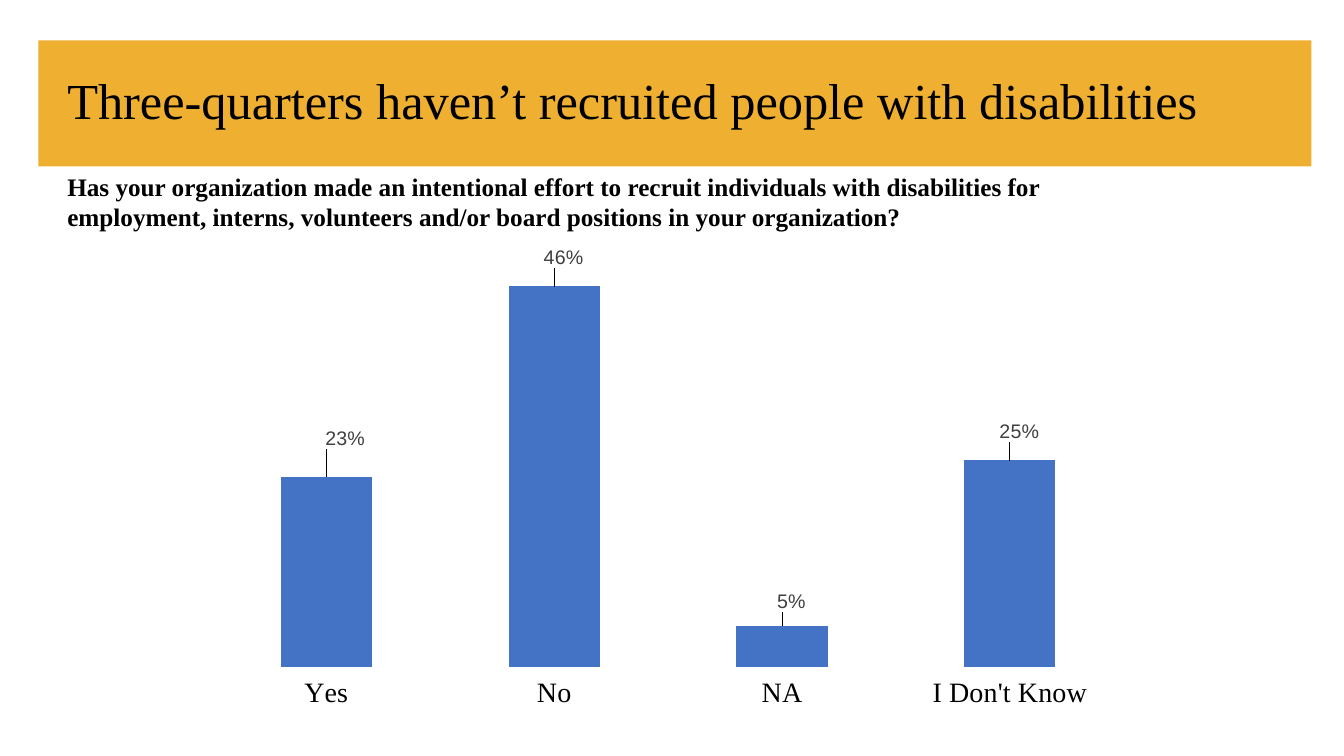
from dataclasses import dataclass

from lxml.etree import fromstring
from pptx import Presentation
from pptx.chart.data import CategoryChartData as ChartData
from pptx.dml.color import RGBColor as Rgb
from pptx.enum.chart import XL_CHART_TYPE as Kind
from pptx.enum.chart import XL_LABEL_POSITION as Spot
from pptx.enum.chart import XL_TICK_LABEL_POSITION as Ticks
from pptx.enum.chart import XL_TICK_MARK as Mark
from pptx.enum.shapes import MSO_SHAPE as Shape
from pptx.enum.text import MSO_ANCHOR as Anchor
from pptx.util import Pt

NS = "http://schemas.openxmlformats.org/drawingml/2006/chart"


@dataclass(frozen=True)
class Theme:
    gold: str = "EFAF30"
    blue: str = "4472C4"
    black: str = "000000"
    gray: str = "404040"
    serif: str = "Times New Roman"
    sans: str = "Arial"
    title: int = 36
    axis: int = 20
    body: int = 18
    label: int = 14
    base: int = 10


THEME = Theme()

# Answer, percent, and label shift as a share of the chart size
ANSWERS = [
    ("Yes", 23, 0.02, -0.05),
    ("No", 46, 0.01, -0.03),
    ("NA", 5, 0.01, -0.02),
    ("I Don't Know", 25, 0.01, -0.03),
]


def style(font, size, color=THEME.black, face=THEME.serif, bold=False):
    font.size, font.name, font.bold = Pt(size), face, bold
    font.color.rgb = Rgb.from_string(color)


def add_band(slide, box, color):
    band = slide.shapes.add_shape(Shape.RECTANGLE, *map(Pt, box))
    band.shadow.inherit = False
    band.fill.solid()
    band.fill.fore_color.rgb = Rgb.from_string(color)
    band.line.fill.background()


def add_text(slide, text, box, anchor=Anchor.TOP, spacing=1.0, **form):
    frame = slide.shapes.add_textbox(*map(Pt, box)).text_frame
    frame.word_wrap = True
    frame.vertical_anchor = anchor
    para = frame.paragraphs[0]
    para.line_spacing = spacing
    run = para.add_run()
    run.text = text
    style(run.font, **form)


def layout(target="", **sizes):
    """Build a manual chart layout from shares of the chart size."""
    inner = f'<c:layoutTarget val="{target}"/>' if target else ""
    if target:
        inner += '<c:xMode val="edge"/><c:yMode val="edge"/>'
    inner += "".join(f'<c:{key} val="{val}"/>' for key, val in sizes.items())
    return fromstring(
        f'<c:layout xmlns:c="{NS}"><c:manualLayout>{inner}'
        "</c:manualLayout></c:layout>"
    )


def add_labels(plot, series):
    plot.has_data_labels = True
    labels = plot.data_labels
    labels.show_value = True
    labels.number_format = '0"%"'
    labels.number_format_is_linked = False
    labels.position = Spot.OUTSIDE_END
    style(labels.font, THEME.label, THEME.gray, THEME.sans)
    # Shift each label off its bar
    for index, (_, _, x, y) in enumerate(ANSWERS):
        label = series.points[index].data_label
        style(label.font, THEME.label, THEME.gray, THEME.sans)
        label.position = Spot.OUTSIDE_END
    for node, (_, _, x, y) in zip(series.data_labels._element.findall(f"{{{NS}}}dLbl"), ANSWERS):
        node.insert(1, layout(x=x, y=y))


def add_bars(slide, box):
    data = ChartData(number_format='0"%"')
    data.categories = [row[0] for row in ANSWERS]
    data.add_series("Series 1", [row[1] for row in ANSWERS])
    chart = slide.shapes.add_chart(
        Kind.COLUMN_CLUSTERED, *map(Pt, box), data
    ).chart
    chart.has_title = chart.has_legend = False
    style(chart.font, THEME.base, face=THEME.sans)

    # Axes
    across, up = chart.category_axis, chart.value_axis
    across.major_tick_mark = Mark.NONE
    across.tick_label_position = Ticks.LOW
    across.format.line.fill.background()
    style(across.tick_labels.font, THEME.axis)
    up.minimum_scale, up.maximum_scale = 0, 50
    up.has_major_gridlines = up.visible = False

    # Columns
    plot = chart.plots[0]
    plot.gap_width, plot.vary_by_categories = 150, False
    series = plot.series[0]
    series.format.fill.solid()
    series.format.fill.fore_color.rgb = Rgb.from_string(THEME.blue)
    add_labels(plot, series)

    # Plot area
    area = chart._chartSpace.chart.plotArea
    for old in area.findall(f"{{{NS}}}layout"):
        area.remove(old)
    area.insert(0, layout("inner", x=0.02, y=0.02, w=0.96, h=0.88))


def main():
    deck = Presentation()
    deck.slide_width, deck.slide_height = Pt(960), Pt(540)
    slide = deck.slides.add_slide(deck.slide_layouts[6])

    # Heading
    add_band(slide, (27.4, 28.8, 909.4, 90), THEME.gold)
    add_text(
        slide, "Three-quarters haven’t recruited people with disabilities",
        (41, 28.8, 828, 90), Anchor.MIDDLE, 0.9, size=THEME.title,
    )

    # Chart
    add_bars(slide, (138.2, 174.2, 678.2, 336.2))

    # Survey question
    add_text(
        slide,
        "Has your organization made an intentional effort to recruit "
        "individuals with disabilities for employment, interns, volunteers "
        "and/or board positions in your organization?",
        (41, 118.8, 744.5, 51), size=THEME.body, bold=True,
    )
    deck.save("out.pptx")


if __name__ == "__main__":
    main()
